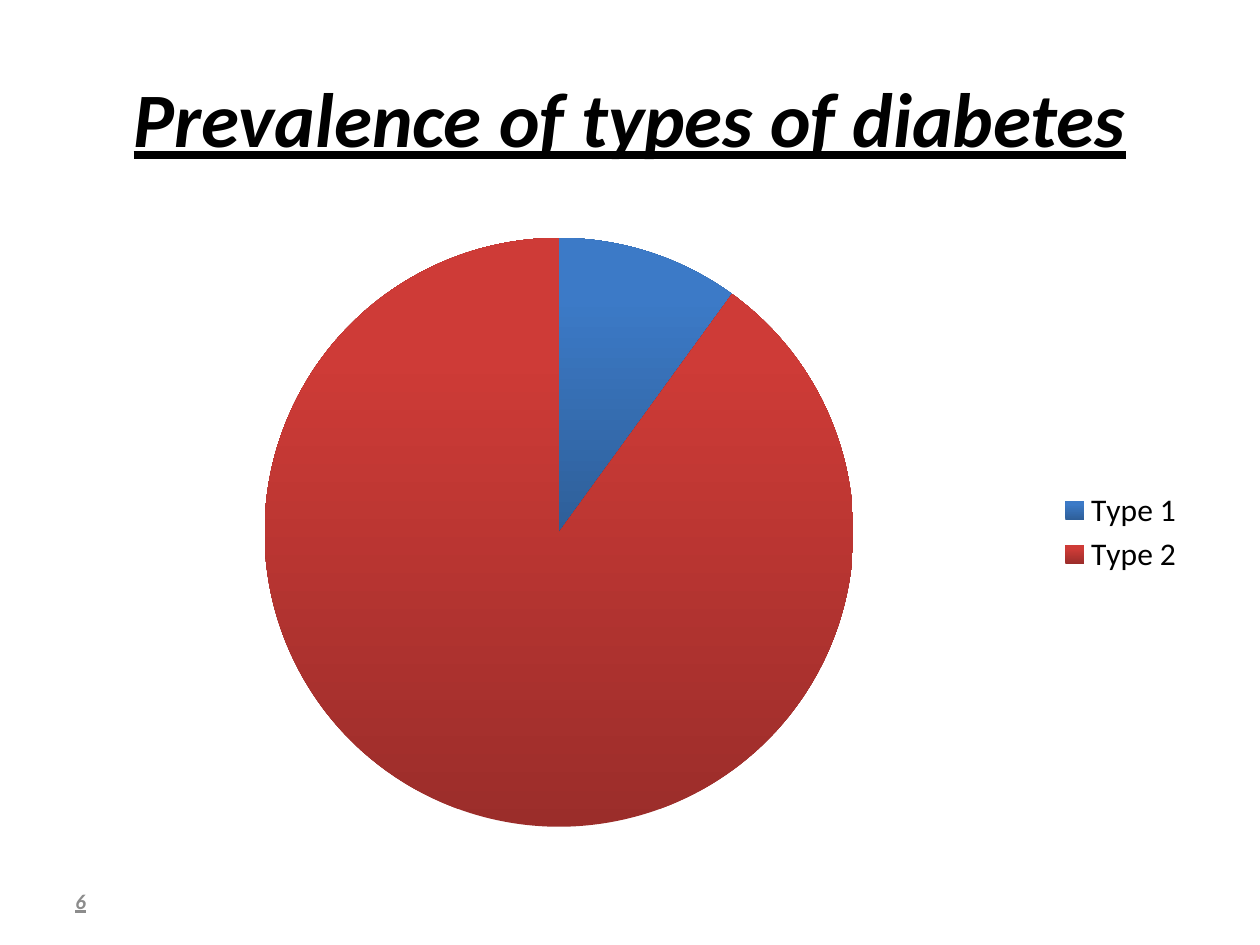
from dataclasses import dataclass

from pptx import Presentation
from pptx.chart.data import CategoryChartData
from pptx.dml.color import RGBColor
from pptx.enum import chart as ch, text as tx
from pptx.util import Inches, Pt


@dataclass(frozen=True)
class Theme:
    font: str = "Calibri"
    ink: str = "000000"
    gray: str = "8C8C8C"
    title: int = 44
    label: int = 18
    small: int = 12
    # Dark to light shade of each slice
    fills: tuple = (("2E5F99", "3C7AC7"), ("9B2D2A", "CE3B37"))


THEME = Theme()
SHARES = {"Type 1": 10, "Type 2": 90}


def style(font, size, color):
    font.name = THEME.font
    font.size = Pt(size)
    font.color.rgb = RGBColor.from_string(color)


def write(shape, words, size, color, align):
    """Fill a shape with one bold, italic, underlined line."""
    frame = shape.text_frame
    frame.text = words
    frame.word_wrap = True
    frame.vertical_anchor = tx.MSO_ANCHOR.MIDDLE
    para = frame.paragraphs[0]
    para.alignment = align
    font = para.runs[0].font
    style(font, size, color)
    font.bold = font.italic = font.underline = True


def add_title(slide, words):
    title = slide.shapes.title
    title.left, title.top = Inches(0.5), Inches(0.3)
    title.width, title.height = Inches(9), Inches(1.25)
    write(title, words, THEME.title, THEME.ink, tx.PP_ALIGN.CENTER)


def shade(fill, dark, light):
    """Blend upward from the dark to the light shade."""
    fill.gradient()
    fill.gradient_angle = 90
    low, high = fill.gradient_stops
    low.color.rgb = RGBColor.from_string(dark)
    high.color.rgb = RGBColor.from_string(light)
    low.position, high.position = 0, 0.8


def add_pie(slide, shares):
    data = CategoryChartData()
    data.categories = list(shares)
    data.add_series("Series 1", list(shares.values()))
    chart = slide.shapes.add_chart(
        ch.XL_CHART_TYPE.PIE, Inches(0.5), Inches(1.75),
        Inches(9), Inches(4.95), data).chart
    chart.has_title = False
    style(chart.font, THEME.label, THEME.ink)
    chart.has_legend = True
    chart.legend.position = ch.XL_LEGEND_POSITION.RIGHT
    chart.legend.include_in_layout = False
    plot = chart.plots[0]
    plot.vary_by_categories = True
    for i, (dark, light) in enumerate(THEME.fills):
        shade(plot.series[0].points[i].format.fill, dark, light)


def add_number(slide, words):
    box = slide.shapes.add_textbox(
        Inches(0.5), Inches(6.95), Inches(2.33), Inches(0.4))
    write(box, words, THEME.small, THEME.gray, tx.PP_ALIGN.LEFT)


def main():
    deck = Presentation()
    deck.slide_width, deck.slide_height = Inches(10), Inches(7.5)
    slide = deck.slides.add_slide(deck.slide_layouts[5])

    # Heading, chart and page number
    add_title(slide, "Prevalence of types of diabetes")
    add_pie(slide, SHARES)
    add_number(slide, "6")

    deck.save("out.pptx")


if __name__ == "__main__":
    main()
